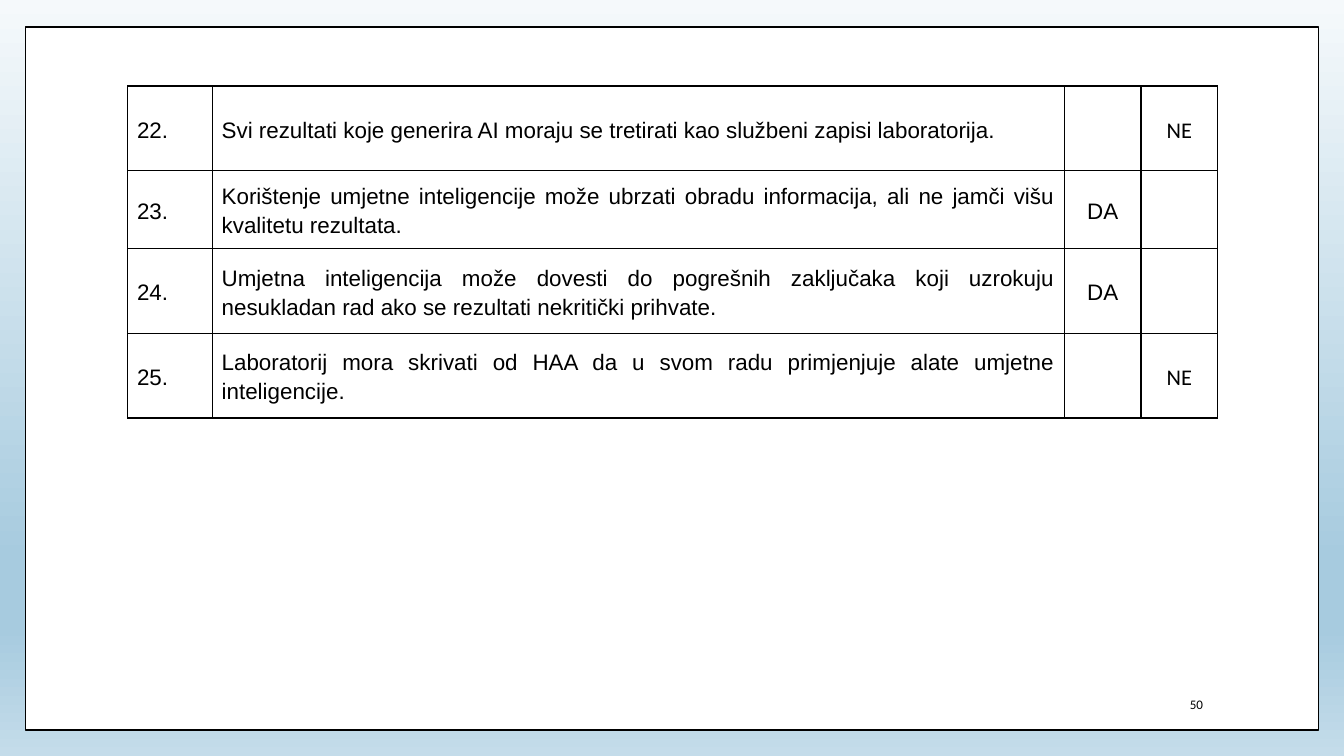
from lxml import etree
from pptx import Presentation
from pptx.dml.color import RGBColor
from pptx.enum.shapes import MSO_SHAPE
from pptx.enum.text import MSO_ANCHOR, PP_ALIGN
from pptx.oxml.ns import qn
from pptx.util import Inches, Pt

RECTANGLE = MSO_SHAPE.RECTANGLE
MIDDLE = MSO_ANCHOR.MIDDLE
LEFT, CENTER, RIGHT, JUSTIFY = (
    PP_ALIGN.LEFT, PP_ALIGN.CENTER, PP_ALIGN.RIGHT, PP_ALIGN.JUSTIFY)

BLACK = RGBColor(0x00, 0x00, 0x00)
WHITE = RGBColor(0xFF, 0xFF, 0xFF)
PALE = RGBColor(0xF5, 0xF9, 0xFB)
BLUE = RGBColor(0xA7, 0xCB, 0xDF)
LIGHT_BLUE = RGBColor(0xC4, 0xDC, 0xEA)
BACKGROUND_STOPS = [(0, PALE), (74, BLUE), (83, BLUE), (100, LIGHT_BLUE)]

SLIDE_WIDTH = 10
SLIDE_HEIGHT = SLIDE_WIDTH * 9 / 16

COLUMN_WIDTHS = [0.63, 6.34, 0.57, 0.57]
ROW_HEIGHTS = [0.63, 0.58, 0.63, 0.63]
COLUMN_ALIGNMENTS = [LEFT, JUSTIFY, CENTER, CENTER]
COLUMN_FONTS = ["Arial", "Arial", "Arial", "Calibri"]
STATEMENTS = [
    ("22.", "Svi rezultati koje generira AI moraju se tretirati kao službeni "
            "zapisi laboratorija.", "", "NE"),
    ("23. ", "Korištenje umjetne inteligencije može ubrzati obradu informacija, "
             "ali ne jamči višu kvalitetu rezultata.", "DA", ""),
    ("24. ", "Umjetna inteligencija može dovesti do pogrešnih zaključaka koji "
             "uzrokuju nesukladan rad ako se rezultati nekritički prihvate.",
     "DA", ""),
    ("25. ", "Laboratorij mora skrivati od HAA da u svom radu primjenjuje alate "
             "umjetne inteligencije.", "", "NE"),
]


def set_background(slide):
    fill = slide.background.fill
    fill.gradient()
    fill.gradient_angle = 270  # counter-clockwise, so colours run downwards
    stop_list = next(slide.element.iter(qn("a:gsLst")))
    for stop in list(stop_list):
        stop_list.remove(stop)
    for percent, color in BACKGROUND_STOPS:
        stop = etree.SubElement(stop_list, qn("a:gs"), pos=str(percent * 1000))
        etree.SubElement(stop, qn("a:srgbClr"), val=str(color))


def add_frame(slide):
    frame = slide.shapes.add_shape(
        RECTANGLE, Inches(0.19), Inches(0.2), Inches(9.62), Inches(5.23))
    frame.shadow.inherit = False
    frame.fill.solid()
    frame.fill.fore_color.rgb = WHITE
    frame.line.color.rgb = BLACK
    frame.line.width = Pt(1)


def format_paragraph(paragraph, alignment, spacing, after, font_name, size):
    paragraph.alignment = alignment
    paragraph.line_spacing = spacing
    paragraph.space_after = Pt(after)
    for run in paragraph.runs:
        run.font.name = font_name
        run.font.size = Pt(size)
        run.font.color.rgb = BLACK


def add_slide_number(slide):
    box = slide.shapes.add_textbox(
        Inches(7.65), Inches(5.1), Inches(1.4), Inches(0.3))
    text_frame = box.text_frame
    text_frame.word_wrap = True
    text_frame.vertical_anchor = MIDDLE
    text_frame.text = "50"
    format_paragraph(text_frame.paragraphs[0], RIGHT, 0.9, 6, "Calibri", 7)


def add_borders(cell):
    properties = cell._tc.get_or_add_tcPr()
    for side in ("lnL", "lnR", "lnT", "lnB"):
        line = etree.SubElement(properties, qn(f"a:{side}"), w=str(Pt(0.75)))
        fill = etree.SubElement(line, qn("a:solidFill"))
        etree.SubElement(fill, qn("a:srgbClr"), val=str(BLACK))


def fill_cell(cell, text, alignment, font_name):
    add_borders(cell)
    cell.fill.background()
    cell.vertical_anchor = MIDDLE
    cell.margin_left = cell.margin_right = Inches(0.07)
    cell.margin_top = cell.margin_bottom = 0
    cell.text = text
    format_paragraph(
        cell.text_frame.paragraphs[0], alignment, 1.15, 3, font_name, 12)


def add_statement_table(slide):
    table = slide.shapes.add_table(
        len(ROW_HEIGHTS), len(COLUMN_WIDTHS), Inches(0.95), Inches(0.64),
        Inches(sum(COLUMN_WIDTHS)), Inches(sum(ROW_HEIGHTS))).table
    table.first_row = False
    table.horz_banding = False
    for column, width in zip(table.columns, COLUMN_WIDTHS):
        column.width = Inches(width)
    for row, height, texts in zip(table.rows, ROW_HEIGHTS, STATEMENTS):
        row.height = Inches(height)
        for cell, text, alignment, font_name in zip(
                row.cells, texts, COLUMN_ALIGNMENTS, COLUMN_FONTS):
            fill_cell(cell, text, alignment, font_name)


def main():
    presentation = Presentation()
    presentation.slide_width = Inches(SLIDE_WIDTH)
    presentation.slide_height = Inches(SLIDE_HEIGHT)
    blank_layout = presentation.slide_layouts[6]
    slide = presentation.slides.add_slide(blank_layout)
    set_background(slide)
    add_frame(slide)
    add_slide_number(slide)
    add_statement_table(slide)
    presentation.save("out.pptx")


if __name__ == "__main__":
    main()
